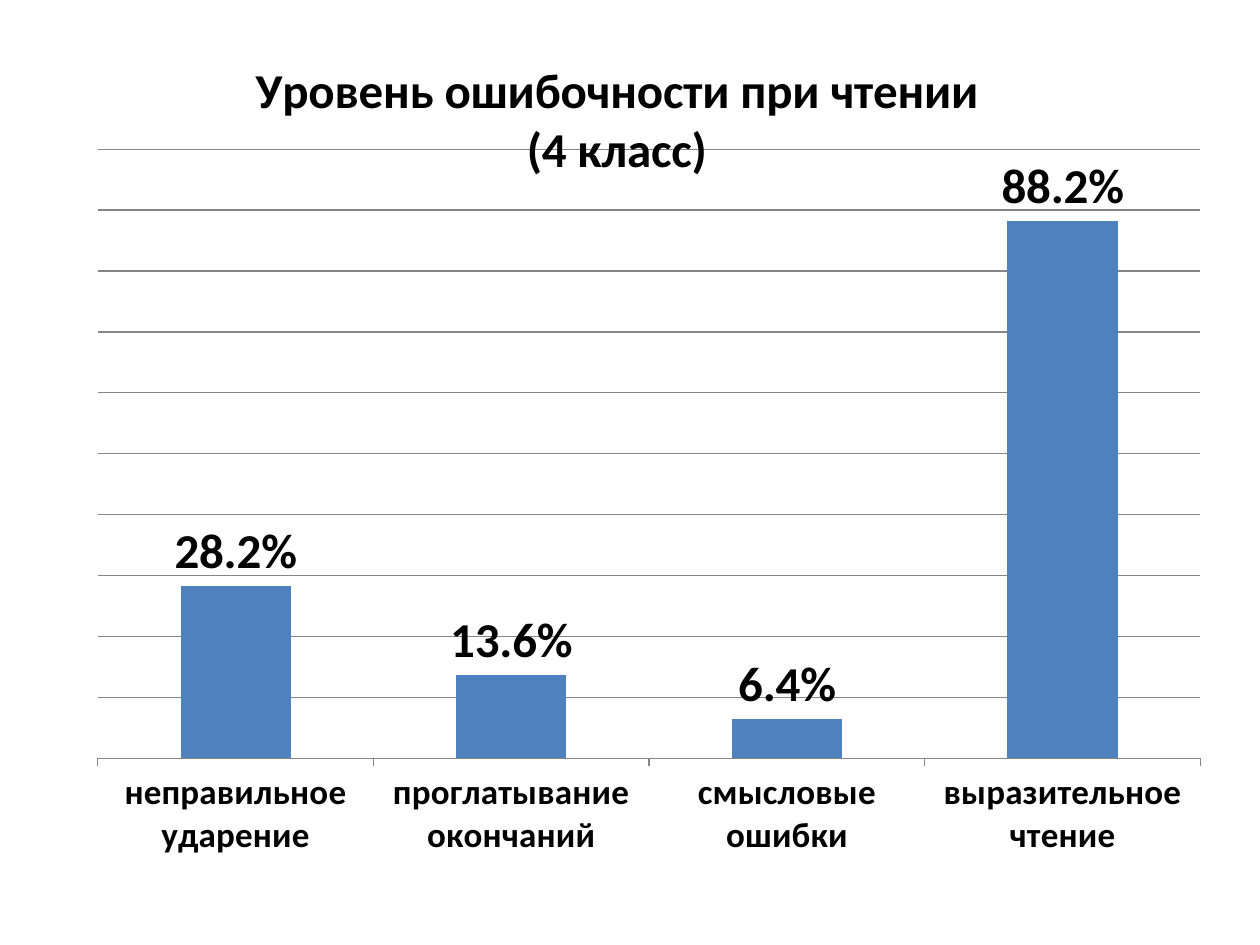
from typing import NamedTuple

from lxml.etree import SubElement as Sub
from pptx import Presentation
from pptx.chart.chart import Chart
from pptx.chart.data import CategoryChartData as Data
from pptx.dml.color import RGBColor as Rgb
from pptx.enum.chart import XL_CHART_TYPE as Kind
from pptx.enum.chart import XL_LABEL_POSITION as Spot
from pptx.enum.chart import XL_TICK_MARK as Tick
from pptx.oxml.ns import qn
from pptx.text.text import Font
from pptx.util import Pt

COLORS = {"text": "000000", "bar": "4F81BD", "grid": "868686"}
FACE = "Calibri"
TITLE = ("Уровень ошибочности при чтении", "(4 класс)")


class Bar(NamedTuple):
    label: str
    share: float


class Frame(NamedTuple):
    """Fractions of the chart area."""
    x: float
    y: float
    w: float = 0
    h: float = 0


BARS = (
    Bar("неправильное ударение", 0.282),
    Bar("проглатывание окончаний", 0.136),
    Bar("смысловые ошибки", 0.064),
    Bar("выразительное чтение", 0.882),
)


def color(name: str) -> Rgb:
    return Rgb.from_string(COLORS[name])


def style(font: Font, size: float, bold: bool = True) -> None:
    font.name, font.size, font.bold = FACE, Pt(size), bold
    font.color.rgb = color("text")


def place(node, frame: Frame, inner: bool = False) -> None:
    """Give a title or plot area a manual layout."""
    layout = node.find(qn("c:layout"))
    if layout is None:
        layout = Sub(node, qn("c:layout"))
        text = node.find(qn("c:tx"))
        if text is None:
            node.insert(0, layout)
        else:
            text.addnext(layout)
    for old in list(layout):
        layout.remove(old)
    manual = Sub(layout, qn("c:manualLayout"))
    rows = [("layoutTarget", "inner")] if inner else []
    rows += [("xMode", "edge"), ("yMode", "edge")]
    rows += [(key, str(val)) for key, val in frame._asdict().items() if val]
    for tag, val in rows:
        Sub(manual, qn(f"c:{tag}")).set("val", val)


def add_title(chart: Chart) -> None:
    chart.has_title = True
    title = chart.chart_title
    frame = title.text_frame
    for i, line in enumerate(TITLE):
        para = frame.add_paragraph() if i else frame.paragraphs[0]
        para.text = line
        style(para.font, 28)
    title.include_in_layout = True
    place(title._element, Frame(0.16, 0.01))


def set_axes(chart: Chart) -> None:
    cat, val = chart.category_axis, chart.value_axis
    cat.major_tick_mark = Tick.OUTSIDE
    style(cat.tick_labels.font, 20)
    val.minimum_scale, val.maximum_scale, val.major_unit = 0, 1, 0.1
    val.has_major_gridlines = True
    val.visible = False
    for line in (cat.format.line, val.major_gridlines.format.line):
        line.color.rgb = color("grid")
        line.width = Pt(0.75)


def set_bars(chart: Chart) -> None:
    plot = chart.plots[0]
    plot.gap_width = 150
    plot.vary_by_categories = False
    fill = plot.series[0].format.fill
    fill.solid()
    fill.fore_color.rgb = color("bar")
    labels = plot.series[0].data_labels
    labels.show_value = True
    labels.number_format = "0.0%"
    labels.number_format_is_linked = False
    labels.position = Spot.OUTSIDE_END
    style(labels.font, 28)


def main() -> None:
    deck = Presentation()
    deck.slide_width, deck.slide_height = Pt(720), Pt(540)
    slide = deck.slides.add_slide(deck.slide_layouts[6])
    data = Data(number_format="0.0%")
    data.categories = [bar.label for bar in BARS]
    data.add_series("Series 1", [bar.share for bar in BARS])
    chart = slide.shapes.add_chart(
        Kind.COLUMN_CLUSTERED, Pt(39.6), Pt(28), Pt(652.3), Pt(461.5), data
    ).chart
    style(chart.font, 10, False)
    chart.has_legend = False
    add_title(chart)
    set_axes(chart)
    set_bars(chart)
    area = chart._chartSpace.chart.plotArea
    place(area, Frame(0.025, 0.125, 0.966, 0.759), inner=True)
    deck.save("out.pptx")


if __name__ == "__main__":
    main()
